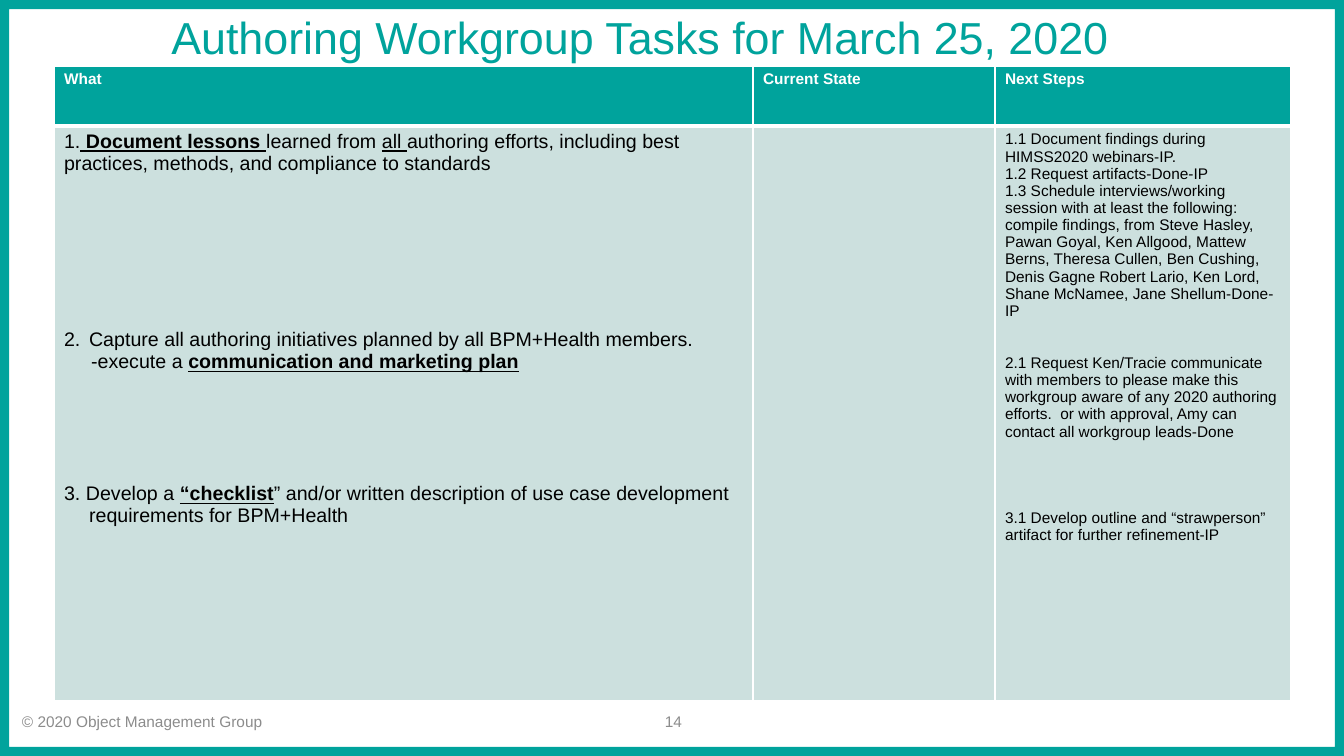
from lxml import etree
from pptx import Presentation
from pptx.dml.color import RGBColor
from pptx.enum.shapes import MSO_SHAPE as Preset
from pptx.enum.text import MSO_ANCHOR as Anchor, MSO_AUTO_SIZE as AutoSize, PP_ALIGN as Align
from pptx.oxml.ns import qn
from pptx.util import Emu, Pt

TEAL, PALE, WHITE, BLACK, GREY = "00A39C", "CCE0DE", "FFFFFF", "000000", "8C8C8C"
EMU_PER_PX = 914400 / 100.8
SLIDE = (1344, 756)

TITLE = "Authoring Workgroup Tasks for March 25, 2020"
TITLE_BOX = (61, -33, 1159, 146)
FOOTERS = [
    ("© 2020 Object Management Group", (12, 701, 439, 40), Align.LEFT),
    ("14", (651, 701, 41, 40), Align.RIGHT),
]

TABLE_AT = (54, 66)
COLUMNS = (699, 242, 296)
ROWS = (60, 575)
HEADERS = ["What", "Current State", "Next Steps"]

# Paragraph: runs of (text, marks), then gap before, left margin, first-line indent, start number
# Marks: b = bold, u = underlined
TASKS = [
    ([("1.", ""), (" Document lessons ", "bu"), ("learned from ", ""), ("all ", "u"),
      ("authoring efforts, including best practices, methods, and compliance to standards", "")],
     0, 0, 0, None),
    ([("Capture all authoring initiatives planned by all BPM+Health members.", "")],
     154, 25, -25, 2),
    ([("-execute a ", ""), ("communication and marketing plan", "bu")], 0, 27, 0, None),
    ([("3. Develop a ", ""), ("“checklist", "bu"),
      ("” and/or written description of use case development requirements for BPM+Health", "")],
     110, 25, -25, None),
]
NEXT_STEPS = [
    ("1.1 Document findings during HIMSS2020 webinars-IP.", 0),
    ("1.2 Request artifacts-Done-IP", 0),
    ("1.3 Schedule interviews/working session with at least the following: compile findings, "
     "from Steve Hasley, Pawan Goyal, Ken Allgood, Mattew Berns, Theresa Cullen, Ben Cushing, "
     "Denis Gagne Robert Lario, Ken Lord, Shane McNamee, Jane Shellum-Done-IP", 0),
    ("2.1 Request Ken/Tracie communicate with members to please make this workgroup aware of "
     "any 2020 authoring efforts.  or with approval, Amy can contact all workgroup leads-Done", 35),
    ("3.1 Develop outline and “strawperson” artifact for further refinement-IP", 69),
]


def px(length):
    return Emu(round(length * EMU_PER_PX))


def rgb(value):
    return RGBColor.from_string(value)


def set_all(target, values):
    for name, value in values.items():
        setattr(target, name, value)


def style(font, size, color, bold=False, underline=False):
    set_all(font, {"name": "Arial", "size": Pt(size), "bold": bold, "underline": underline})
    font.color.rgb = rgb(color)


def write_paragraphs(frame, paragraphs, size, color):
    for index, (runs, gap, margin, indent, start) in enumerate(paragraphs):
        para = frame.paragraphs[0] if index == 0 else frame.add_paragraph()
        props = para._p.get_or_add_pPr()
        props.set("marL", str(px(margin)))
        props.set("indent", str(px(indent)))
        if start:
            etree.SubElement(props, qn("a:buAutoNum"), type="arabicPeriod", startAt=str(start))
        if gap:
            para.space_before = px(gap)
        for text, marks in runs:
            run = para.add_run()
            run.text = text
            style(run.font, size, color, "b" in marks, "u" in marks)


def plain(text, gap=0, marks=""):
    return [(text, marks)], gap, 0, 0, None


def paint_cell(cell, fill, top, bottom):
    """Fill the cell and give it white borders; top and bottom are widths in points."""
    cell.fill.solid()
    cell.fill.fore_color.rgb = rgb(fill)
    props = cell._tc.get_or_add_tcPr()
    for index, (side, width) in enumerate(zip("LRTB", (1, 1, top, bottom))):
        line = etree.Element(qn(f"a:ln{side}"), w=str(Pt(width)))
        solid = etree.SubElement(line, qn("a:solidFill"))
        etree.SubElement(solid, qn("a:srgbClr"), val=WHITE)
        props.insert(index, line)


def add_border_frame(slide):
    border = slide.shapes.add_shape(Preset.FRAME, 0, 0, *map(px, SLIDE))
    border.adjustments[0] = 0.012
    border.shadow.inherit = False
    border.fill.solid()
    border.fill.fore_color.rgb = rgb(TEAL)
    border.line.fill.background()


def add_title(slide):
    title = slide.shapes.title
    set_all(title, dict(zip(("left", "top", "width", "height"), map(px, TITLE_BOX))))
    frame = title.text_frame
    set_all(frame, {"text": TITLE, "word_wrap": True, "auto_size": AutoSize.NONE,
                    "vertical_anchor": Anchor.MIDDLE})
    set_all(frame.paragraphs[0], {"alignment": Align.CENTER, "line_spacing": 0.9})
    style(frame.paragraphs[0].runs[0].font, 32, TEAL)


def add_task_table(slide):
    table = slide.shapes.add_table(len(ROWS), len(COLUMNS), *map(px, TABLE_AT),
                                   px(sum(COLUMNS)), px(sum(ROWS))).table
    for column, width in zip(table.columns, COLUMNS):
        column.width = px(width)
    for row, height in zip(table.rows, ROWS):
        row.height = px(height)
    for index, header in enumerate(HEADERS):
        head, body = table.cell(0, index), table.cell(1, index)
        write_paragraphs(head.text_frame, [plain(header, marks="b")], 11, WHITE)
        paint_cell(head, TEAL, 1, 3)
        paint_cell(body, PALE, 3, 1)
    write_paragraphs(table.cell(1, 0).text_frame, TASKS, 14, BLACK)
    steps = [plain(text, gap) for text, gap in NEXT_STEPS]
    write_paragraphs(table.cell(1, 2).text_frame, steps, 11, BLACK)


def add_footers(slide):
    for text, box, align in FOOTERS:
        frame = slide.shapes.add_textbox(*map(px, box)).text_frame
        set_all(frame, {"word_wrap": True, "vertical_anchor": Anchor.MIDDLE})
        write_paragraphs(frame, [plain(text)], 11, GREY)
        frame.paragraphs[0].alignment = align


def main():
    deck = Presentation()
    deck.slide_width, deck.slide_height = map(px, SLIDE)
    slide = deck.slides.add_slide(deck.slide_layouts[5])
    add_border_frame(slide)
    add_title(slide)
    add_task_table(slide)
    add_footers(slide)
    deck.save("out.pptx")


if __name__ == "__main__":
    main()
